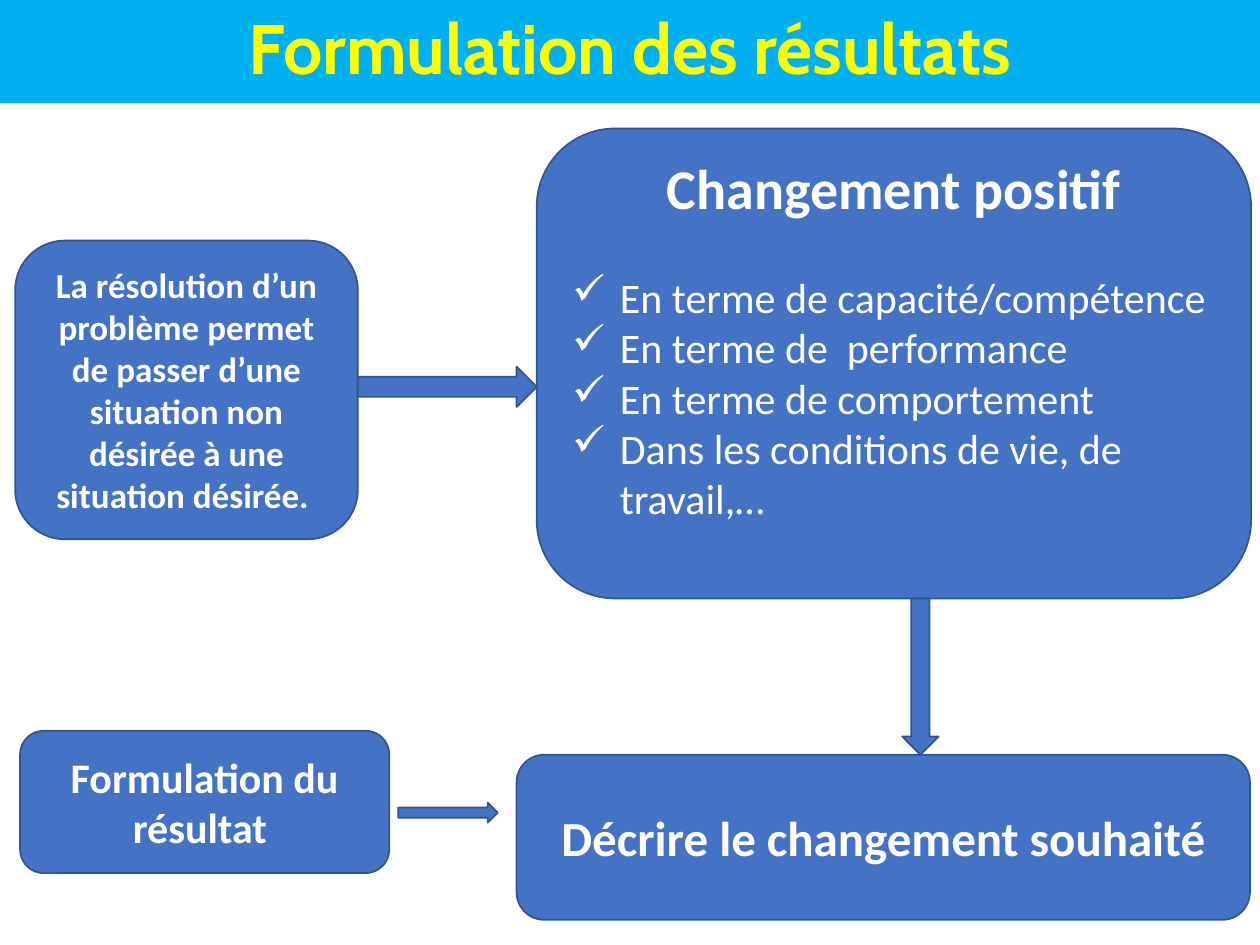
"""Build a slide on how to word results, from problem solving to the wanted change."""
import pptx
import pptx.dml.color
import pptx.enum.shapes
import pptx.enum.text
import pptx.oxml.ns
import pptx.util
from lxml import etree

Inches = pptx.util.Inches
Pt = pptx.util.Pt
Shapes = pptx.enum.shapes.MSO_SHAPE
Align = pptx.enum.text.PP_ALIGN

TITLE = "Formulation des résultats"
BOXES = [
    ((0.12, 1.91, 2.72, 2.37), 20,
     "La résolution d’un problème permet de passer d’une situation non désirée à une situation désirée. "),
    ((0.16, 5.8, 2.93, 1.13), 24, "Formulation du résultat "),
    ((4.1, 5.99, 5.82, 1.31), 28, "Décrire le changement souhaité"),
]
CHANGE_PLACE = (4.26, 1.02, 5.67, 3.73)
CHANGE_HEADING = "Changement positif"
CHANGE_ITEMS = [
    "En terme de capacité/compétence",
    "En terme de  performance",
    "En terme de comportement",
    "Dans les conditions de vie, de travail,…",
]
ARROWS = [
    (Shapes.RIGHT_ARROW, (2.84, 2.91, 1.42, 0.32)),
    (Shapes.RIGHT_ARROW, (3.16, 6.37, 0.79, 0.16)),
    (Shapes.DOWN_ARROW, (7.16, 4.75, 0.29, 1.24)),
]


def set_color(color_format, value):
    color_format.rgb = pptx.dml.color.RGBColor.from_string(value)


def write(paragraph, text, size, bold=True, color="FFFFFF", font="Calibri",
          align=Align.CENTER, after=0, spacing=1.0, bullet=None):
    paragraph.alignment = align
    paragraph.space_before = Pt(0)
    paragraph.space_after = Pt(after)
    paragraph.line_spacing = spacing
    run = paragraph.add_run()
    run.text = text
    run.font.size = Pt(size)
    run.font.bold = bold
    run.font.name = font
    set_color(run.font.color, color)
    if bullet:
        properties = paragraph._p.get_or_add_pPr()
        properties.set("marL", str(Inches(0.38)))
        properties.set("indent", str(-Inches(0.38)))
        mark = etree.SubElement(properties, pptx.oxml.ns.qn("a:buChar"))
        mark.set("char", bullet)


def add_block(slide, kind, place):
    shape = slide.shapes.add_shape(kind, *map(Inches, place))
    shape.shadow.inherit = False
    shape.fill.solid()
    set_color(shape.fill.fore_color, "4472C4")
    set_color(shape.line.color, "325491")
    shape.line.width = Pt(1)
    shape.text_frame.word_wrap = True
    shape.text_frame.vertical_anchor = pptx.enum.text.MSO_ANCHOR.MIDDLE
    return shape


def add_title(slide):
    title = slide.shapes.title
    title.left, title.top, title.width, title.height = map(Inches, (0, 0, 10, 0.82))
    title.fill.solid()
    set_color(title.fill.fore_color, "00B0F0")
    frame = title.text_frame
    frame.auto_size = pptx.enum.text.MSO_AUTO_SIZE.NONE
    frame.vertical_anchor = pptx.enum.text.MSO_ANCHOR.MIDDLE
    write(frame.paragraphs[0], TITLE, 40, color="FFFF00", font="Cabin", spacing=0.9)


def add_change_box(slide):
    frame = add_block(slide, Shapes.ROUNDED_RECTANGLE, CHANGE_PLACE).text_frame
    frame.margin_bottom = Inches(0.45)
    write(frame.paragraphs[0], CHANGE_HEADING, 32, after=29)
    for item in CHANGE_ITEMS:
        write(frame.add_paragraph(), item, 24, bold=False, align=Align.LEFT, bullet="✓")


def main():
    presentation = pptx.Presentation()
    presentation.slide_width = Inches(10)
    presentation.slide_height = Inches(7.5)
    slide = presentation.slides.add_slide(presentation.slide_layouts[5])
    add_title(slide)
    add_change_box(slide)
    for place, size, text in BOXES:
        box = add_block(slide, Shapes.ROUNDED_RECTANGLE, place)
        write(box.text_frame.paragraphs[0], text, size)
    for kind, place in ARROWS:
        add_block(slide, kind, place)
    presentation.save("out.pptx")


if __name__ == "__main__":
    main()
